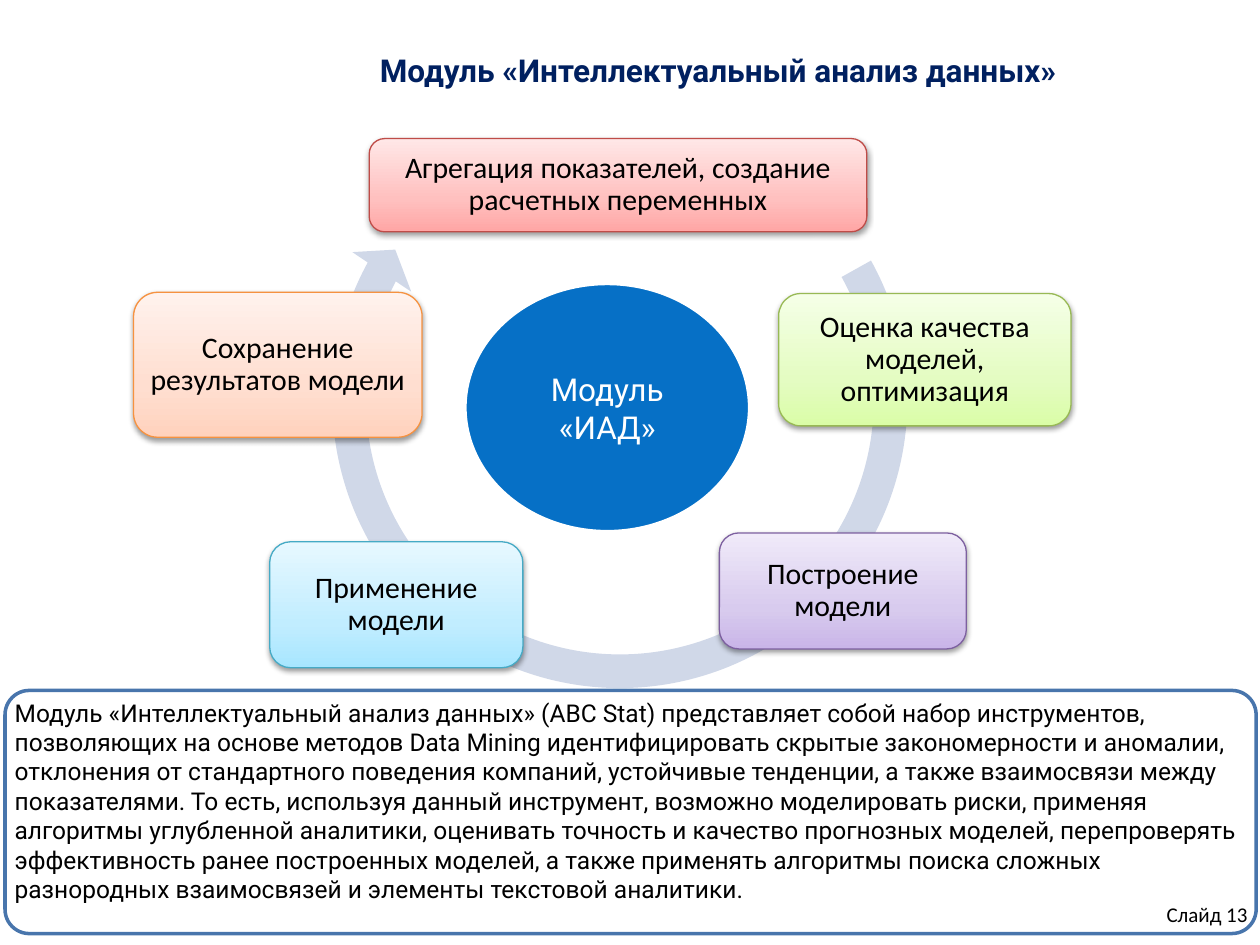
"""Build a slide showing the cycle of a data mining module."""
import copy

import lxml.etree
import pptx
import pptx.dml.color
import pptx.enum.shapes
import pptx.enum.text
import pptx.oxml.ns
import pptx.util

RGB = pptx.dml.color.RGBColor
KIND = pptx.enum.shapes.MSO_SHAPE
ALIGN = pptx.enum.text.PP_ALIGN
ANCHOR = pptx.enum.text.MSO_ANCHOR
BLACK, WHITE = RGB(0, 0, 0), RGB(255, 255, 255)
NAVY, BLUE = RGB(0x00, 0x20, 0x60), RGB(0x06, 0x70, 0xC6)
PALE, EDGE = RGB(0xD0, 0xD8, 0xE8), RGB(0x48, 0x75, 0xAC)

TITLE = "Модуль «Интеллектуальный анализ данных»"
HUB = "Модуль «ИАД»"
FOOT = "Слайд 13"
BODY = (
    "Модуль «Интеллектуальный анализ данных» (ABC Stat) представляет собой "
    "набор инструментов, позволяющих на основе методов Data Mining "
    "идентифицировать скрытые закономерности и аномалии, отклонения от "
    "стандартного поведения компаний, устойчивые тенденции, а также "
    "взаимосвязи между показателями. То есть, используя данный инструмент, "
    "возможно моделировать риски, применяя алгоритмы углубленной аналитики, "
    "оценивать точность и качество прогнозных моделей, перепроверять "
    "эффективность ранее построенных моделей, а также применять алгоритмы "
    "поиска сложных разнородных взаимосвязей и элементы текстовой аналитики."
)
STEPS = [
    ("Агрегация показателей, создание расчетных переменных",
     (2.93, 1.1, 3.95, 0.74), "BF4C48", ("FFA6A5", "FFC0BF", "FFE7E7")),
    ("Оценка качества моделей, оптимизация",
     (6.18, 2.33, 2.32, 1.05), "98B955", ("DAFDA7", "E4FCC2", "F5FFE7")),
    ("Построение модели",
     (5.71, 4.23, 1.96, 0.92), "7D60A0", ("C9B5E8", "D8CBEE", "F0EAF9")),
    ("Применение модели",
     (2.14, 4.3, 2.01, 1), "46AAC5", ("A7E6FF", "C1EDFF", "E7F8FF")),
    ("Сохранение результатов модели",
     (1.06, 2.32, 2.29, 1.15), "F69240", ("FFD2BD", "FFDED0", "FFF2ED")),
]
STOPS = (0, 0.35, 1)
RING = (0.055, 3.307, 115.734, 189.214, 0.058)


def place(box):
    return [pptx.util.Inches(part) for part in box]


def draw(slide, kind, box, fill=None, line=None, width=0.75):
    shape = slide.shapes.add_shape(kind, *place(box))
    shape.shadow.inherit = False
    if fill is not None:
        shape.fill.solid()
        shape.fill.fore_color.rgb = fill
    if line is None:
        shape.line.fill.background()
    else:
        shape.line.color.rgb = line
        shape.line.width = pptx.util.Pt(width)
    return shape


def write(shape, text, size, font, color=BLACK, align=ALIGN.CENTER,
          anchor=ANCHOR.MIDDLE, pads=(0.1, 0.05, 0.1, 0.05), bold=False):
    frame = shape.text_frame
    frame.word_wrap = True
    frame.vertical_anchor = anchor
    (frame.margin_left, frame.margin_top,
     frame.margin_right, frame.margin_bottom) = place(pads)
    para = frame.paragraphs[0]
    para.alignment = align
    run = para.add_run()
    run.text = text
    run.font.size = pptx.util.Pt(size)
    run.font.name = font
    run.font.bold = bold
    run.font.color.rgb = color
    return para


def shade(shape, tones):
    shape.fill.gradient()
    shape.fill.gradient_angle = 90
    stops = shape.element.spPr.find(".//" + pptx.oxml.ns.qn("a:gsLst"))
    stops.insert(1, copy.deepcopy(stops[0]))
    for stop, spot, tone in zip(shape.fill.gradient_stops, STOPS, tones):
        stop.position = spot
        stop.color.rgb = RGB.from_string(tone)


def cast(shape):
    qn = pptx.oxml.ns.qn
    list_ = shape.element.spPr.find(qn("a:effectLst"))
    drop = lxml.etree.SubElement(list_, qn("a:outerShdw"), blurRad="40000",
                                 dist="20000", dir="5400000", rotWithShape="0")
    tone = lxml.etree.SubElement(drop, qn("a:srgbClr"), val="000000")
    lxml.etree.SubElement(tone, qn("a:alpha"), val="38000")


def main():
    deck = pptx.Presentation()
    deck.slide_width, deck.slide_height = place((10, 7.5))
    slide = deck.slides.add_slide(deck.slide_layouts[6])

    ring = draw(slide, KIND.CIRCULAR_ARROW, (2.49, 0.75, 4.86, 4.86), PALE)
    ring.rotation = 15.5
    for spot, value in enumerate(RING):
        ring.adjustments[spot] = value

    for text, box, line, tones in STEPS:
        step = draw(slide, KIND.ROUNDED_RECTANGLE, box,
                    line=RGB.from_string(line))
        shade(step, tones)
        cast(step)
        para = write(step, text, 17, "Calibri", pads=(0.07,) * 4)
        para.line_spacing = 0.9

    head = slide.shapes.add_textbox(*place((1.93, 0.36, 7.14, 0.4)))
    write(head, TITLE, 18, "Roboto", NAVY, anchor=ANCHOR.TOP,
          pads=(0.5, 0.05, 0.1, 0.05), bold=True)

    panel = draw(slide, KIND.ROUNDED_RECTANGLE, (0.04, 5.48, 9.93, 1.93),
                 WHITE, EDGE, 2)
    panel.adjustments[0] = 0.1
    write(panel, BODY, 14, "Roboto", align=ALIGN.LEFT, anchor=ANCHOR.TOP,
          pads=(0.02, 0, 0.05, 0))

    hub = draw(slide, KIND.OVAL, (3.69, 2.25, 2.26, 1.97), BLUE, WHITE, 2)
    write(hub, HUB, 18, "Roboto", WHITE)

    foot = slide.shapes.add_textbox(*place((7.67, 7.11, 2.33, 0.4)))
    write(foot, FOOT, 12, "Calibri", align=ALIGN.RIGHT, anchor=ANCHOR.TOP)

    deck.save("out.pptx")


if __name__ == "__main__":
    main()
